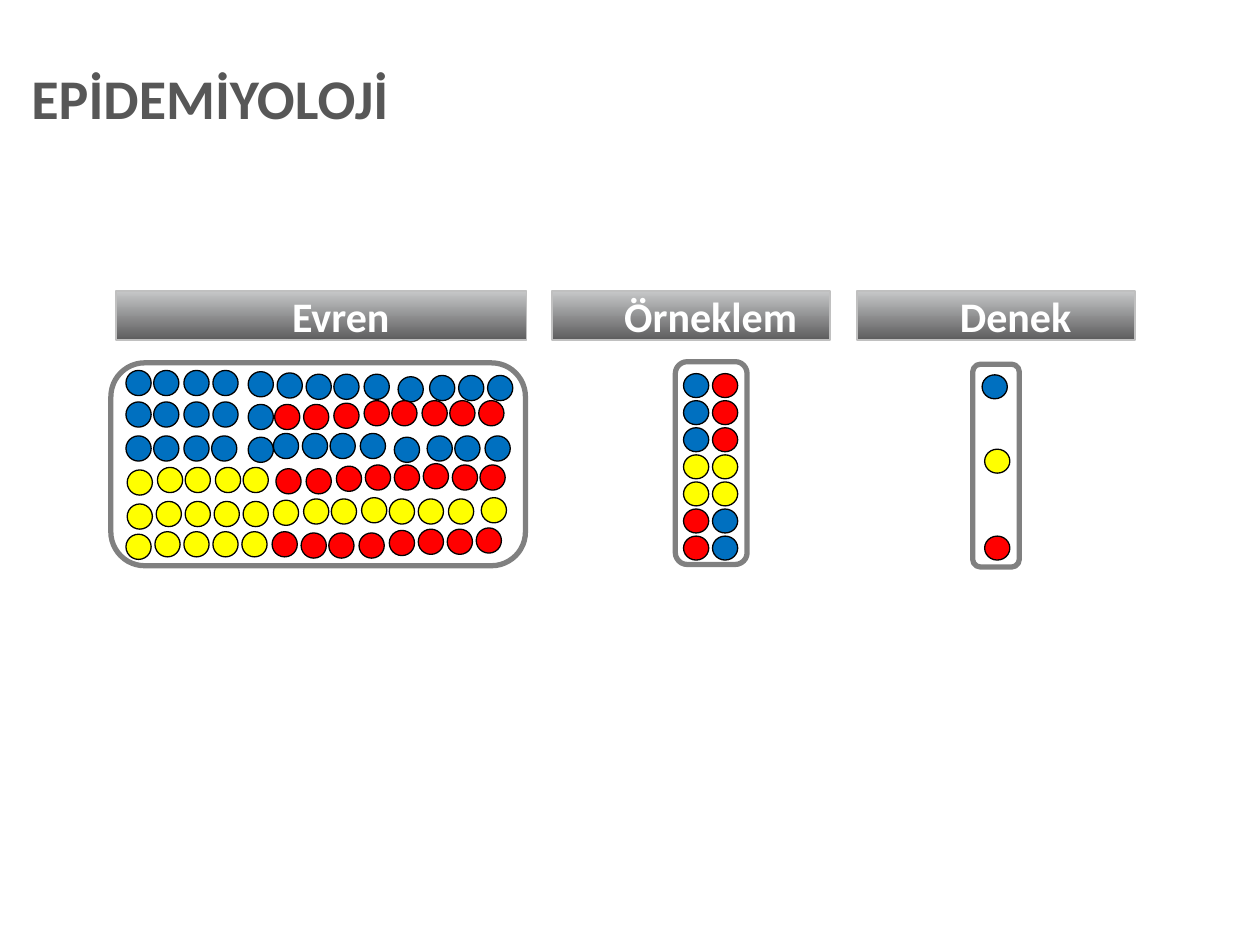
import pptx
import pptx.util
import pptx.dml.color
import pptx.enum.shapes
import pptx.enum.text

Inches = pptx.util.Inches
SHAPES = pptx.enum.shapes.MSO_SHAPE
ALIGN = pptx.enum.text.PP_ALIGN
ANCHOR = pptx.enum.text.MSO_ANCHOR

GROUPS = {"B": "0070C0", "R": "FF0000", "Y": "FFFF00"}
DOT = 0.2
POPULATION = [
    ("BBBBBBBBBBBBB",
     [12, 34, 58, 81, 109, 132, 155, 177, 201, 228, 253, 276, 299],
     [6, 6, 6, 6, 7, 8, 9, 9, 9, 11, 10, 10, 10]),
    ("BBBBBRRRRRRRR",
     [12, 34, 58, 81, 109, 130, 153, 177, 201, 223, 247, 269, 292],
     [31, 31, 31, 31, 33, 33, 33, 32, 30, 30, 30, 30, 30]),
    ("BBBBBBBBBBBBB",
     [12, 34, 58, 80, 109, 129, 152, 174, 198, 225, 251, 273, 297],
     [58, 58, 58, 58, 59, 56, 56, 56, 56, 59, 58, 58, 58]),
    ("YYYYYRRRRRRRR",
     [13, 37, 59, 83, 105, 131, 155, 179, 202, 225, 248, 271, 293],
     [85, 83, 83, 83, 83, 84, 84, 82, 81, 81, 80, 81, 81]),
    ("YYYYYYYYYYYYY",
     [13, 36, 59, 82, 105, 129, 153, 175, 199, 221, 244, 268, 294],
     [112, 110, 110, 110, 110, 109, 108, 108, 107, 108, 108, 108, 107]),
    ("YYYYYRRRRRRRR",
     [12, 35, 58, 81, 104, 128, 151, 173, 197, 221, 244, 267, 290],
     [136, 134, 134, 134, 134, 134, 135, 135, 135, 133, 132, 132, 131]),
]
SAMPLE_COLUMNS = ["BBBYYRR", "RRRYYBB"]
SUBJECTS = [("B", 0.08, 0.08), ("Y", 0.1, 0.67), ("R", 0.1, 1.36)]


def color(value):
    return pptx.dml.color.RGBColor.from_string(value)


def add_outlined(shapes, kind, box, line, width, fill=None, rotation=0):
    shape = shapes.add_shape(kind, *map(Inches, box))
    shape.shadow.inherit = False
    shape.rotation = rotation
    shape.line.color.rgb = color(line)
    shape.line.width = pptx.util.Pt(width)
    if fill:
        shape.fill.solid()
        shape.fill.fore_color.rgb = color(fill)
    else:
        shape.fill.background()
    return shape


def write(shape, text, size, fill, align=ALIGN.LEFT, insets=(0, 0, 0, 0), spacing=None):
    frame = shape.text_frame
    frame.word_wrap = True
    frame.vertical_anchor = ANCHOR.MIDDLE
    frame.margin_left, frame.margin_top, frame.margin_right, frame.margin_bottom = map(Inches, insets)
    paragraph = frame.paragraphs[0]
    paragraph.alignment = align
    if spacing:
        paragraph.line_spacing = spacing
    run = paragraph.add_run()
    run.text = text
    run.font.name = "Calibri"
    run.font.size = pptx.util.Pt(size)
    run.font.bold = True
    run.font.color.rgb = color(fill)


def add_title(slide, box):
    write(slide.shapes.add_textbox(*map(Inches, box)), "EPİDEMİYOLOJİ", 32, "575757",
          insets=(0, 0.05, 0, 0.05), spacing=0.9)


def add_header(slide, box, label):
    header = add_outlined(slide.shapes, SHAPES.RECTANGLE, box, "C0C0C0", 1)
    header.fill.gradient()
    header.fill.gradient_angle = 270
    for stop, (position, shade) in zip(header.fill.gradient_stops, ((0, "C6C7C8"), (1, "5C5C5D"))):
        stop.position = position
        stop.color.rgb = color(shade)
    write(header, label, 24, "FFFFFF", align=ALIGN.CENTER, insets=(0.31, 0, 0, 0))


def add_people(slide, box, people, turned=False):
    left, top, width, height = box
    panel = slide.shapes.add_group_shape().shapes
    rotation, dot_width, frame_box = 0, DOT, box
    if turned:
        rotation, dot_width = 270, 0.19
        shift = (height - width) / 2
        frame_box = (left - shift, top + shift, height, width)
    add_outlined(panel, SHAPES.ROUNDED_RECTANGLE, frame_box, "808080", 3, rotation=rotation)
    for group, x, y in people:
        add_outlined(panel, SHAPES.OVAL, (left + x, top + y, dot_width, DOT),
                     "000000", 0.75, GROUPS[group], rotation)


def add_population(slide, box):
    add_people(slide, box, [(group, x / 100, y / 100)
                            for row in POPULATION for group, x, y in zip(*row)])


def add_sample(slide, box):
    add_people(slide, box, [(group, 0.07 + 0.23 * column, 0.09 + 1.29 * row / 6)
                            for column, groups in enumerate(SAMPLE_COLUMNS)
                            for row, group in enumerate(groups)], turned=True)


def add_subjects(slide, box):
    add_people(slide, box, SUBJECTS, turned=True)


def main():
    presentation = pptx.Presentation()
    presentation.slide_width = Inches(10)
    presentation.slide_height = Inches(7.5)
    slide = presentation.slides.add_slide(presentation.slide_layouts[6])
    add_title(slide, (0.25, 0.45, 9.64, 0.71))
    add_population(slide, (0.88, 2.88, 3.29, 1.61))
    for label, left, width in (("Evren", 0.92, 3.26), ("Örneklem", 4.38, 2.21), ("Denek", 6.8, 2.21)):
        add_header(slide, (left, 2.31, width, 0.39), label)
    add_sample(slide, (5.36, 2.87, 0.57, 1.61))
    add_subjects(slide, (7.72, 2.89, 0.37, 1.61))
    presentation.save("out.pptx")


if __name__ == "__main__":
    main()
